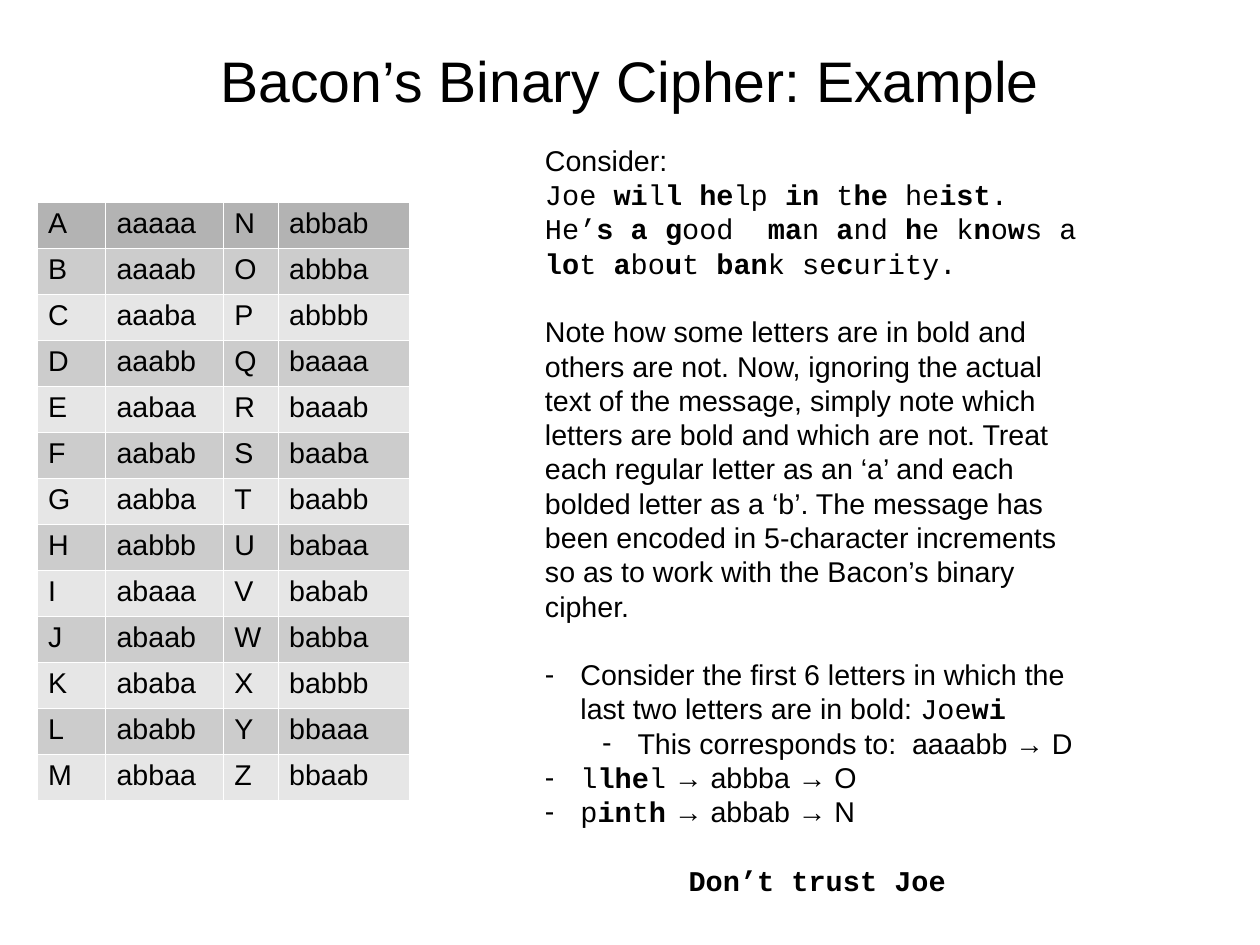
from lxml import etree
from pptx import Presentation
from pptx.dml.color import RGBColor
from pptx.enum.text import MSO_ANCHOR, PP_ALIGN
from pptx.oxml.ns import qn
from pptx.util import Cm, Inches, Pt

CENTER = PP_ALIGN.CENTER
MIDDLE = MSO_ANCHOR.MIDDLE
SANS, MONO = "Arial", "Courier New"
COLORS = {"text": "000000", "border": "FFFFFF", "first": "B3B3B3",
          "dark": "CCCCCC", "light": "E6E6E6"}
ALPHABET = "ABCDEFGHIJKLMNOPQRSTUVWXYZ"
ROWS = len(ALPHABET) // 2
COLUMN_WIDTHS = [0.6, 1.03, 0.48, 1.15]
BODY_SIZE, LINE = 18, 21.6
INDENT = 0.31

presentation = Presentation()
presentation.slide_width = Cm(28)
presentation.slide_height = Cm(21)
slide = presentation.slides.add_slide(presentation.slide_layouts[6])


def style_run(run, size, font=SANS, bold=False):
    run.font.size = Pt(size)
    run.font.name = font
    run.font.bold = bold
    run.font.color.rgb = RGBColor.from_string(COLORS["text"])


def add_marked_runs(paragraph, marked_text):
    """Add runs: | switches between sans and mono, * switches bold on and off."""
    for font_index, font_part in enumerate(marked_text.split("|")):
        for bold_index, text in enumerate(font_part.split("*")):
            if text:
                run = paragraph.add_run()
                run.text = text
                style_run(run, BODY_SIZE, (SANS, MONO)[font_index % 2], bold_index % 2 == 1)


# Title
title = slide.shapes.add_textbox(Inches(0.55), Inches(0.46), Inches(9.92), Inches(0.55))
title_frame = title.text_frame
title_frame.word_wrap = True
title_frame.vertical_anchor = MIDDLE
title_frame.margin_left = title_frame.margin_right = 0
title_frame.margin_top = title_frame.margin_bottom = 0
title_frame.text = "Bacon’s Binary Cipher: Example"
title_paragraph = title_frame.paragraphs[0]
title_paragraph.alignment = CENTER
title_paragraph.line_spacing = 0.9
style_run(title_paragraph.runs[0], 36)

# Cipher table: each code is the letter's place in the alphabet, in binary
table_height = 5.23
cipher_table = slide.shapes.add_table(
    ROWS, len(COLUMN_WIDTHS), Inches(0.32), Inches(1.77),
    Inches(sum(COLUMN_WIDTHS)), Inches(table_height)).table
for column, width in zip(cipher_table.columns, COLUMN_WIDTHS):
    column.width = Inches(width)
for row_index, row in enumerate(cipher_table.rows):
    row.height = Inches(table_height / ROWS)
    shade = "first" if row_index == 0 else ("light", "dark")[row_index % 2]
    texts = []
    for place in (row_index, row_index + ROWS):
        code = f"{place:05b}".replace("0", "a").replace("1", "b")
        texts += [ALPHABET[place], code]
    for cell, text in zip(row.cells, texts):
        cell.text_frame.text = text
        style_run(cell.text_frame.paragraphs[0].runs[0], BODY_SIZE)
        properties = cell._tc.get_or_add_tcPr()
        for side in ("a:lnL", "a:lnR", "a:lnT", "a:lnB"):
            border = etree.SubElement(properties, qn(side), w=str(Pt(0.06)))
            border_fill = etree.SubElement(border, qn("a:solidFill"))
            etree.SubElement(border_fill, qn("a:srgbClr"), val=COLORS["border"])
        cell.fill.solid()
        cell.fill.fore_color.rgb = RGBColor.from_string(COLORS[shade])

# Explanation: marked text, bullet level (None for plain text), space before in points
explanation = [
    ("Consider:", None, 0),
    ("|Joe *wi*l*l he*lp *in *t*he *he*ist*. He’*s a g*ood  *ma*n *a*nd *h*e k*n*o*w*s a "
     "*lo*t *a*bo*u*t *ban*k se*c*urity.", None, 0),
    ("Note how some letters are in bold and others are not. Now, ignoring the actual text "
     "of the message, simply note which letters are bold and which are not. Treat each "
     "regular letter as an ‘a’ and each bolded letter as a ‘b’. The message has been "
     "encoded in 5-character increments so as to work with the Bacon’s binary cipher.",
     None, LINE),
    ("Consider the first 6 letters in which the last two letters are in bold: |Joe*wi",
     0, LINE),
    ("This corresponds to:  aaaabb → D", 1, 0),
    ("|l*lhe*l| → abbba → O", 0, 0),
    ("|p*in*t*h*| → abbab → N", 0, 0),
    ("|*Don’t trust Joe", None, LINE),
]
body = slide.shapes.add_textbox(Inches(4.67), Inches(1.2), Inches(4.96), Inches(7.06))
body_frame = body.text_frame
body_frame.word_wrap = True
for index, (marked_text, level, space_before) in enumerate(explanation):
    paragraph = body_frame.add_paragraph() if index else body_frame.paragraphs[0]
    paragraph.line_spacing = Pt(LINE)
    paragraph.space_before = Pt(space_before)
    add_marked_runs(paragraph, marked_text)
    if level is not None:
        paragraph.level = level
        properties = paragraph._p.get_or_add_pPr()
        properties.set("marL", str(Inches(INDENT + level * 0.5)))
        properties.set("indent", str(-Inches(INDENT)))
        etree.SubElement(properties, qn("a:buFont"), typeface=SANS)
        etree.SubElement(properties, qn("a:buChar"), char="-")
paragraph.alignment = CENTER

presentation.save("out.pptx")
